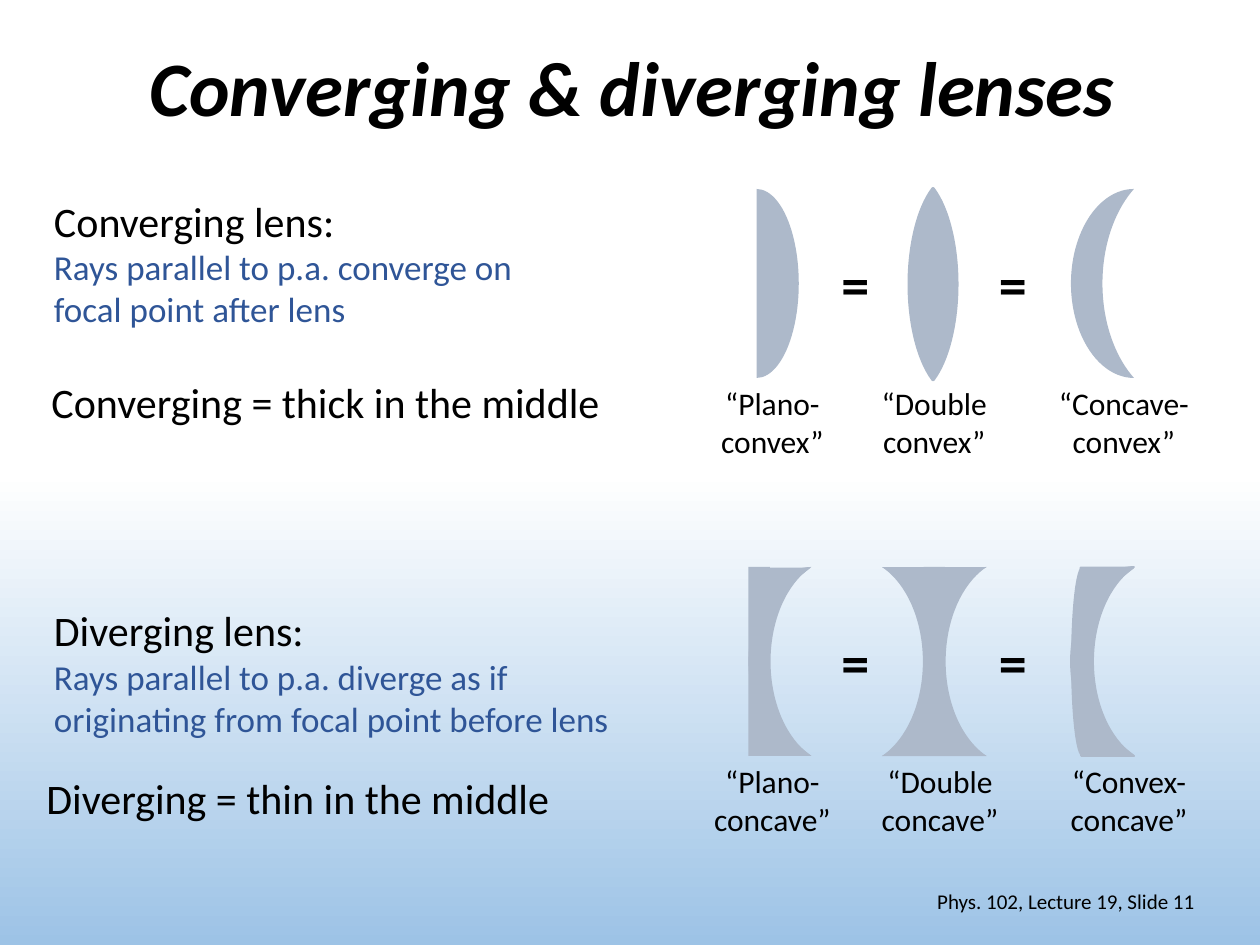
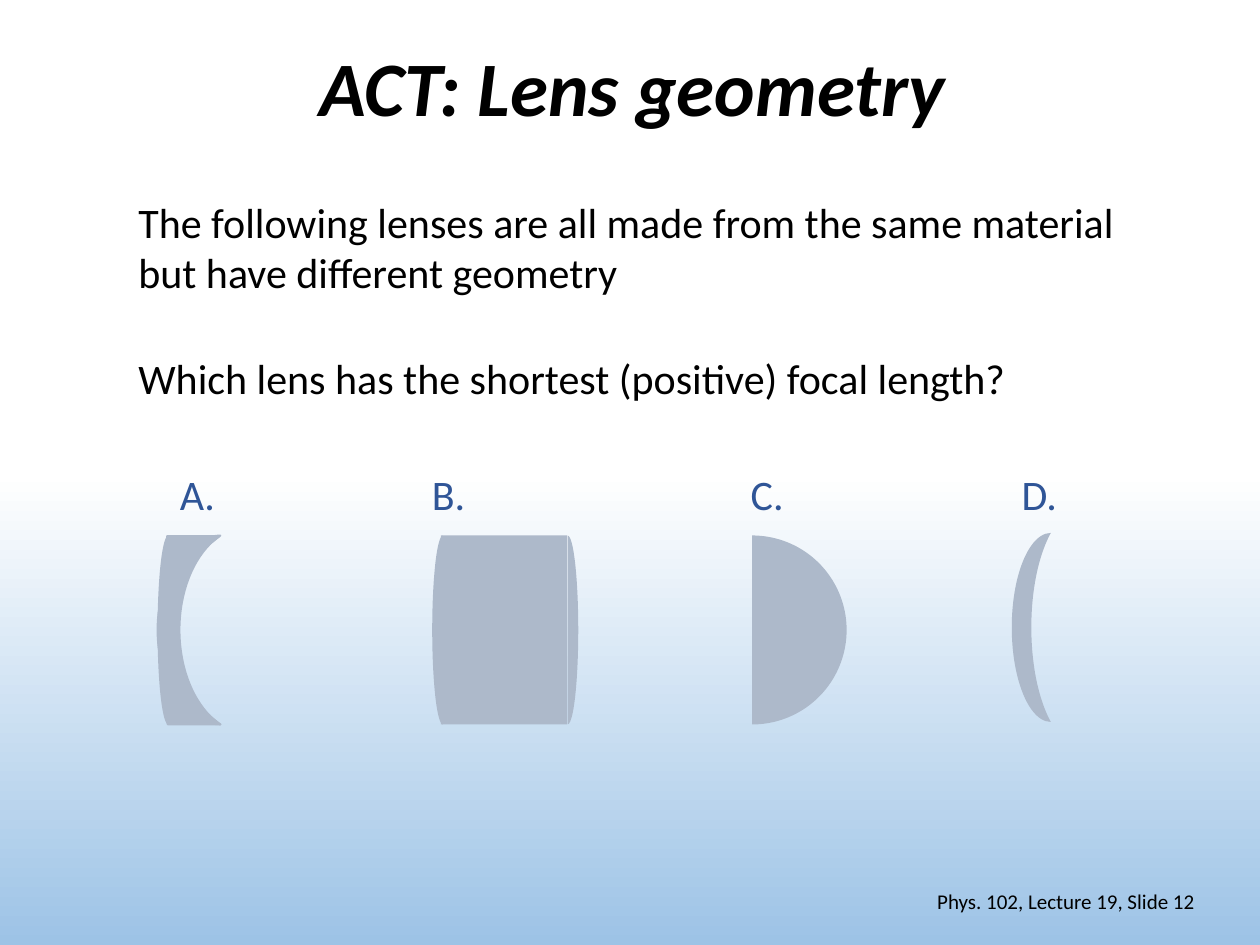
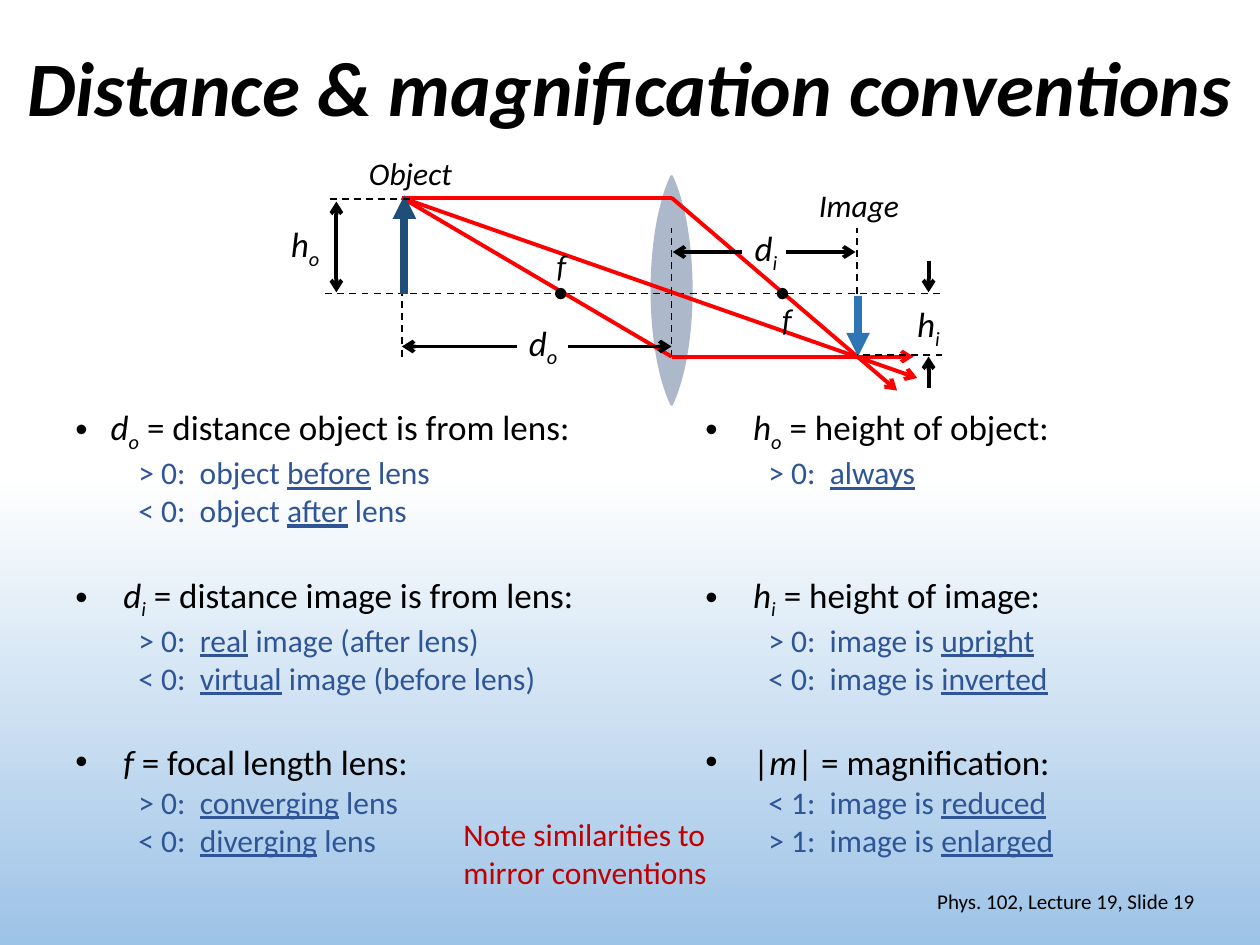
from collections import namedtuple
from lxml.etree import SubElement
from pptx import Presentation
from pptx.dml.color import RGBColor
from pptx.enum.dml import MSO_LINE
from pptx.enum.shapes import MSO_CONNECTOR, MSO_SHAPE as Preset
from pptx.enum.text import MSO_ANCHOR as Anchor, PP_ALIGN as Align
from pptx.oxml.ns import qn
from pptx.util import Inches, Pt

Box = namedtuple("Box", "left top width height")

FONT = "Calibri"
BLACK, WHITE, SKY = "000000", "FFFFFF", "9DC3E6"
BLUE, GLASS, RED, NOTE_RED = "2F5597", "ADB9CA", "FF0000", "C00000"
OBJECT_BLUE, IMAGE_BLUE = "1F4E79", "2E75B6"
TITLE_BOX = Box(0.71, 0, 8.62, 1.45)
FOOTER_BOX = Box(7.06, 6.95, 2.52, 0.4)
LENS_HEIGHT = 1.5
HALF_ARC = (162, 54)
MOON_DEPTH = 0.351


def colour(code):
    return RGBColor.from_string(code)


def inches(box):
    return [Inches(length) for length in box]


def write(para, text, size=18, color=BLACK, bold=False, italic=False,
          underline=False, subscript=False, align=None):
    span = para.add_run()
    span.text = text
    font = span.font
    font.name, font.size = FONT, Pt(size)
    font.bold, font.italic, font.underline = bold, italic, underline
    font.color.rgb = colour(color)
    if subscript:
        span._r.get_or_add_rPr().set("baseline", "-25000")
    if align is not None:
        para.alignment = align


def add_frame(page, box, wrap=True, anchor=Anchor.TOP):
    frame = page.shapes.add_textbox(*inches(box)).text_frame
    frame.word_wrap = wrap
    frame.vertical_anchor = anchor
    return frame


def add_text(page, box, text, wrap=True, anchor=Anchor.TOP, **style):
    frame = add_frame(page, box, wrap, anchor)
    write(frame.paragraphs[0], text, **style)


def add_symbol(page, box, letter, index):
    para = add_frame(page, box, wrap=False).paragraphs[0]
    write(para, letter, size=20, italic=True)
    write(para, index, size=20, italic=True, subscript=True)


def add_shape(page, preset, box, fill=GLASS, line=None, weight=1, turn=0, adjust=()):
    shape = page.shapes.add_shape(preset, *inches(box))
    shape.shadow.inherit = False
    shape.rotation = turn
    for index, value in enumerate(adjust):
        shape.adjustments[index] = value
    shape.fill.solid()
    shape.fill.fore_color.rgb = colour(fill)
    if line:
        shape.line.color.rgb = colour(line)
        shape.line.width = Pt(weight)
    else:
        shape.line.fill.background()


def add_line(page, start, end, color=BLACK, weight=2.25, dashed=False, head=None, tail=None):
    line = page.shapes.add_connector(MSO_CONNECTOR.STRAIGHT, *inches(start + end))
    line.line.color.rgb = colour(color)
    line.line.width = Pt(weight)
    if dashed:
        line.line.dash_style = MSO_LINE.DASH
    outline = line.line._get_or_add_ln()
    for tag, kind in (("a:headEnd", head), ("a:tailEnd", tail)):
        if kind:
            SubElement(outline, qn(tag), type=kind)
    SubElement(line._element.spPr, qn("a:effectLst"))


def set_background(deck):
    fill = deck.slide_master.background.fill
    fill.gradient()
    fill.gradient_angle = 270
    for stop, position, code in zip(fill.gradient_stops, (0.5, 1), (WHITE, SKY)):
        stop.position = position
        stop.color.rgb = colour(code)


def add_page(deck, title, number, title_box=TITLE_BOX):
    page = deck.slides.add_slide(deck.slide_layouts[5])
    holder = page.shapes.title
    holder.left, holder.top, holder.width, holder.height = inches(title_box)
    holder.text_frame.vertical_anchor = Anchor.MIDDLE
    para = holder.text_frame.paragraphs[0]
    para.line_spacing = 0.9
    write(para, title, size=44, bold=True, italic=True, align=Align.CENTER)
    add_text(page, FOOTER_BOX, f"Phys. 102, Lecture 19, Slide {number}",
             anchor=Anchor.MIDDLE, size=12, align=Align.RIGHT)
    return page


def half_ellipse(page, left, top, width, turn=0):
    add_shape(page, Preset.ARC, Box(left, top, width, LENS_HEIGHT), turn=turn, adjust=HALF_ARC)


def crescent(page, left, top, width):
    add_shape(page, Preset.MOON, Box(left, top, width, LENS_HEIGHT))


def double_convex(page, box, curve=0.75):
    middle, inset = box.left + box.width / 2, 0.18 * box.height
    add_line(page, (middle, box.top + inset), (middle, box.top + box.height - inset), GLASS)
    for left, turn in ((box.left, 0), (box.left + box.width - curve, 180)):
        add_shape(page, Preset.CHORD, Box(left, box.top, curve, box.height),
                  line=GLASS, turn=turn, adjust=(62.1, 153.9))


def concave_side(page, left, top, line=None):
    add_shape(page, Preset.MOON, Box(left, top, 0.5, LENS_HEIGHT), line=line, adjust=[MOON_DEPTH])
    add_shape(page, Preset.RIGHT_TRIANGLE, Box(left + 0.12, top - 0.04, 0.33, 0.42),
              line=line, turn=90)
    add_shape(page, Preset.RIGHT_TRIANGLE, Box(left + 0.08, top + 1.17, 0.42, 0.33), line=line)


def plano_concave(page, left, top):
    concave_side(page, left, top)
    add_shape(page, Preset.RECTANGLE, Box(left, top, 0.17, LENS_HEIGHT))


def convex_concave(page, left, top):
    half_ellipse(page, left, top, 0.17, turn=180)
    concave_side(page, left, top, line=GLASS)


def double_concave(page, left, top):
    for shift, turn in ((0.33, 0), (0, 180)):
        add_shape(page, Preset.MOON, Box(left + shift, top, 0.5, LENS_HEIGHT),
                  turn=turn, adjust=[MOON_DEPTH])
    for shift, turn in ((0, 180), (LENS_HEIGHT - 0.25, 0)):
        add_shape(page, Preset.ISOSCELES_TRIANGLE, Box(left, top + shift, 0.83, 0.25), turn=turn)
    add_shape(page, Preset.RECTANGLE, Box(left + 0.33, top, 0.17, LENS_HEIGHT))


def thick_block(page, left, top):
    half_ellipse(page, left, top, 0.17, turn=180)
    add_shape(page, Preset.RECTANGLE, Box(left + 0.07, top, 1, LENS_HEIGHT))
    half_ellipse(page, left + 0.99, top, 0.17)


def definition(page, box, name, meaning):
    frame = add_frame(page, box)
    write(frame.paragraphs[0], name, size=24)
    write(frame.add_paragraph(), meaning, size=20, color=BLUE)


def lens_labels(page, left, top, captions):
    for shift in (1.16, 2.41):
        add_text(page, Box(left + shift, top + 0.43, 0.43, 0.64), "=",
                 wrap=False, size=32, bold=True)
    for shift, width, caption in captions:
        add_text(page, Box(left + shift, top + LENS_HEIGHT, width, 0.71), caption,
                 align=Align.CENTER)


def lens_types(deck):
    page = add_page(deck, "Converging & diverging lenses", 11)
    definition(page, Box(0.33, 1.5, 4.25, 1.18), "Converging lens:",
               "Rays parallel to p.a. converge on focal point after lens")
    definition(page, Box(0.33, 4.75, 4.67, 1.18), "Diverging lens:",
               "Rays parallel to p.a. diverge as if originating from focal point before lens")
    add_text(page, Box(0.31, 2.94, 4.69, 0.5), "Converging = thick in the middle",
             wrap=False, size=24)
    add_text(page, Box(0.27, 6.08, 4.23, 0.5), "Diverging = thin in the middle",
             wrap=False, size=24)
    left, converging, diverging = 5.42, 1.5, 4.5
    half_ellipse(page, left + 0.25, converging, 0.67)
    double_convex(page, Box(left + 1.79, converging - 0.12, 0.39, 1.75))
    crescent(page, left + 3.08, converging, 0.5)
    plano_concave(page, left + 0.52, diverging)
    double_concave(page, left + 1.58, diverging)
    convex_concave(page, left + 3.08, diverging)
    lens_labels(page, left, converging, [
        (0, 1.42, "“Plano-convex”"),
        (1.33, 1.33, "“Double convex”"),
        (2.75, 1.5, "“Concave-convex”")])
    lens_labels(page, left, diverging, [
        (0, 1.42, "“Plano-concave”"),
        (1.33, 1.42, "“Double concave”"),
        (2.83, 1.42, "“Convex-concave”")])


def lens_question(deck):
    page = add_page(deck, "ACT: Lens geometry", 12)
    add_text(page, Box(1, 1.51, 8.17, 0.91), "The following lenses are all made from the "
             "same material but have different geometry", size=24)
    add_text(page, Box(1, 2.75, 8.17, 0.5),
             "Which lens has the shortest (positive) focal length?", size=24)
    top = 4.25
    convex_concave(page, 1.25, top)
    thick_block(page, 3.43, top)
    half_ellipse(page, 5.22, top, 1.5)
    crescent(page, 8.03, top - 0.02, 0.31)
    for letter, left in zip("ABCD", (1.33, 3.33, 5.86, 8.01)):
        add_text(page, Box(left, 3.67, 0.6, 0.5), f"{letter}.", size=24, color=BLUE)


def ray_diagram(page, box):
    def at(x, y):
        return box.left + x, box.top + y

    object_x, lens_x, image_x, edge_x = 0.99, 3.13, 4.6, 5.28
    object_y, axis_y, image_y = 0.42, 1.18, 1.68
    tip = at(object_x, object_y)

    double_convex(page, Box(*at(lens_x - 0.16, 0.04), 0.32, 2.23))
    add_line(page, at(0.38, axis_y), at(edge_x, axis_y), weight=1, dashed=True)

    rays = [
        (tip, at(lens_x, object_y), None),
        (tip, at(lens_x, image_y), None),
        (at(lens_x, object_y), at(4.92, 1.95), "arrow"),
        (at(lens_x, image_y), at(5.05, image_y), "arrow"),
        (tip, at(5.08, 1.85), "arrow")]
    for start, end, tail in rays:
        add_line(page, start, end, RED, tail=tail)

    for focus_x, label_x, label_y in ((2.25, 2.12, 0.75), (4.01, 3.91, 1.18)):
        add_shape(page, Preset.OVAL, Box(*at(focus_x - 0.04, axis_y - 0.04), 0.08, 0.08),
                  fill=BLACK, line=BLACK, weight=0.75)
        add_text(page, Box(*at(label_x, label_y), 0.28, 0.4), "f", wrap=False, italic=True)

    add_line(page, at(object_x + 0.02, axis_y), at(object_x + 0.02, object_y - 0.02),
             OBJECT_BLUE, 4.5, tail="triangle")
    add_line(page, at(image_x + 0.01, axis_y + 0.02), at(image_x + 0.01, image_y),
             IMAGE_BLUE, 4.5, tail="triangle")
    for name, x, y, width in (("Image", 4.2, 0.28, 0.85), ("Object", 0.63, 0.02, 0.87)):
        add_text(page, Box(*at(x, y), width, 0.4), name, wrap=False, italic=True)

    guides = [
        (object_x, image_y, object_x, axis_y),
        (lens_x, image_y, lens_x, axis_y),
        (image_x, axis_y, image_x, 0.66),
        (lens_x, axis_y, lens_x, 0.66),
        (1.05, object_y + 0.01, 0.38, object_y + 0.01),
        (edge_x, image_y - 0.01, image_x, image_y - 0.01)]
    for x1, y1, x2, y2 in guides:
        add_line(page, at(x1, y1), at(x2, y2), weight=1, dashed=True)

    spans = [
        (2.31, 1.6, lens_x, 1.6),
        (1.9, 1.6, object_x, 1.6),
        (4.04, 0.85, image_x - 0.01, 0.85),
        (3.69, 0.85, lens_x + 0.01, 0.85),
        (5.17, 0.92, 5.17, axis_y - 0.01),
        (5.17, 1.93, 5.17, image_y)]
    for x1, y1, x2, y2 in spans:
        add_line(page, at(x1, y1), at(x2, y2), tail="arrow")
    add_line(page, at(0.47, 0.45), at(0.47, axis_y - 0.01), head="arrow", tail="arrow")

    symbols = [("d", "o", 1.9, 1.35), ("h", "o", 0.01, 0.57),
               ("h", "i", 4.98, 1.2), ("d", "i", 3.69, 0.6)]
    for letter, index, x, y in symbols:
        add_symbol(page, Box(*at(x, y), 0.43, 0.44), letter, index)


def indent(para, margin, first=0, bullet=None):
    props = para._p.get_or_add_pPr()
    props.set("marL", str(Inches(margin)))
    props.set("indent", str(Inches(first)))
    if bullet:
        SubElement(props, qn("a:buFont"), typeface="Arial")
        SubElement(props, qn("a:buChar"), char=bullet)


def convention(page, box, heading, rules, margin=0.38):
    frame = add_frame(page, box)
    para = frame.paragraphs[0]
    indent(para, margin, -margin, "•")
    for text, style in heading:
        write(para, text, size=20, italic="i" in style, subscript="s" in style)
    for before, key, after in rules:
        para = frame.add_paragraph()
        indent(para, 0.5)
        write(para, before, color=BLUE)
        write(para, key, color=BLUE, underline=True)
        if after:
            write(para, after, color=BLUE)


def sign_conventions(deck):
    page = add_page(deck, "Distance & magnification conventions", 19, Box(0, 0, 10, 1.45))
    ray_diagram(page, Box(2.2, 1.15, 5.4, 2.3))
    grid = [
        [([("d", "i"), ("o", "is"), (" = distance object is from lens:", "")],
          [("> 0:  object ", "before", " lens"), ("< 0:  object ", "after", " lens")]),
         ([("h", "i"), ("o", "is"), (" = height of object:", "")],
          [("> 0:  ", "always", "")])],
        [([("d", "i"), ("i", "is"), (" = distance image is from lens:", "")],
          [("> 0:  ", "real", " image (after lens)"),
           ("< 0:  ", "virtual", " image (before lens)")]),
         ([("h", "i"), ("i", "is"), (" = height of image:", "")],
          [("> 0:  image is ", "upright", ""), ("< 0:  image is ", "inverted", "")])],
        [([("f", "i"), (" = focal length lens:", "")],
          [("> 0:  ", "converging", " lens"), ("< 0:  ", "diverging", " lens")]),
         ([("|", ""), ("m", "i"), ("| = magnification:", "")],
          [("< 1:  image is ", "reduced", ""), ("> 1:  image is ", "enlarged", "")])]]
    for row, pair in enumerate(grid):
        for column, (heading, rules) in enumerate(pair):
            box = Box(0.5 + 5 * column, 3.17 + 1.33 * row, 4.75 - 1.25 * column, 1.17)
            convention(page, box, heading, rules, 0.28 if row == column == 0 else 0.38)
    add_text(page, Box(3.58, 6.42, 2.17, 0.71), "Note similarities to mirror conventions",
             color=NOTE_RED)


def main():
    deck = Presentation()
    deck.slide_width, deck.slide_height = Inches(10), Inches(7.5)
    set_background(deck)
    lens_types(deck)
    lens_question(deck)
    sign_conventions(deck)
    deck.save("out.pptx")


if __name__ == "__main__":
    main()
